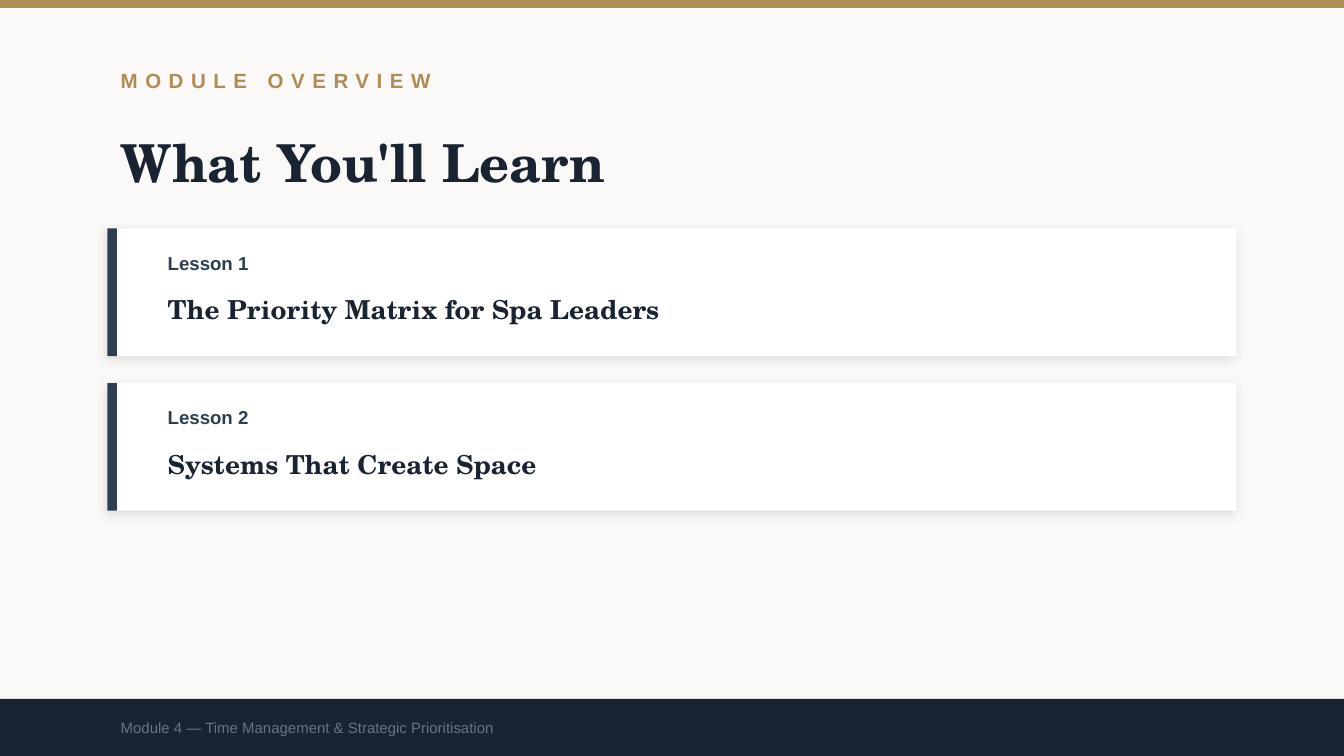
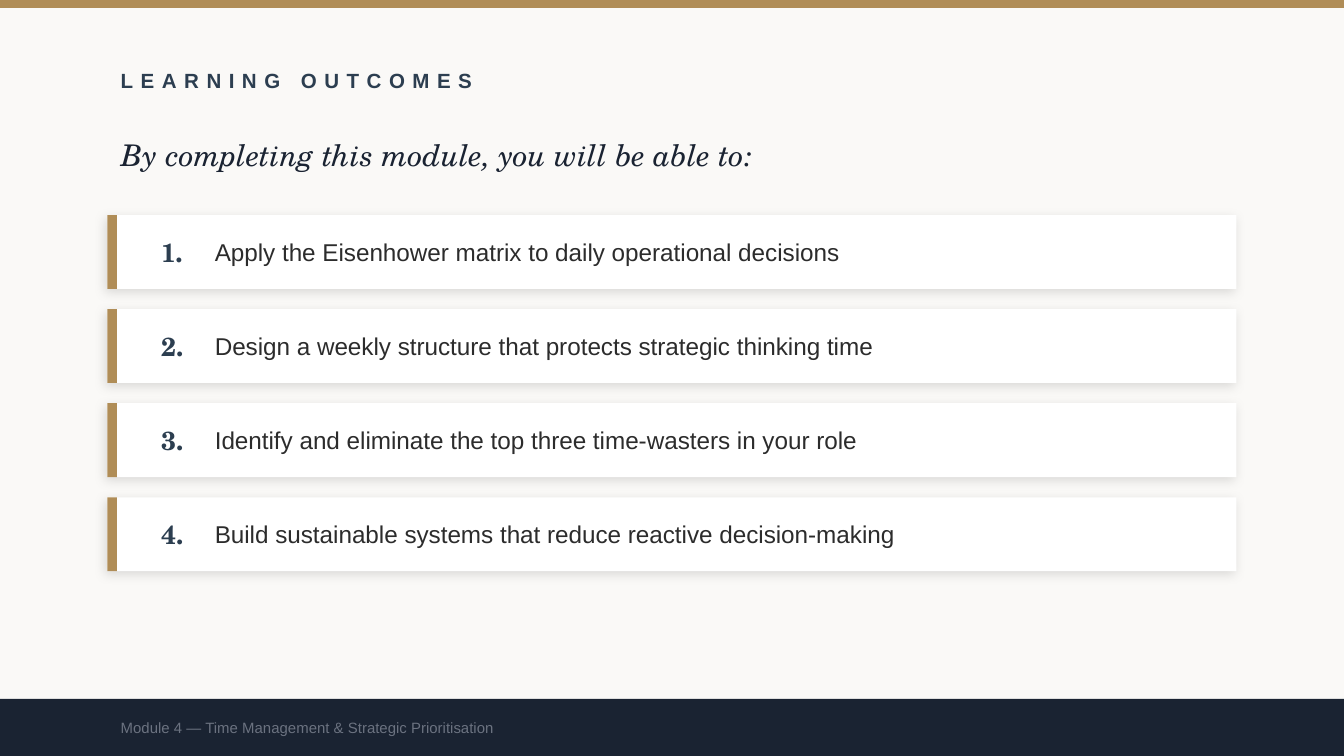
import pptx
import pptx.dml.color
import pptx.enum.shapes
import pptx.enum.text
import pptx.oxml
import pptx.oxml.ns
import pptx.util

Inches = pptx.util.Inches
RGBColor = pptx.dml.color.RGBColor

# Palette and fonts
CREAM = RGBColor(0xFA, 0xF9, 0xF7)
GOLD = RGBColor(0xB0, 0x8D, 0x57)
NAVY = RGBColor(0x1A, 0x23, 0x32)
SLATE = RGBColor(0x2C, 0x3E, 0x50)
WHITE = RGBColor(0xFF, 0xFF, 0xFF)
CHARCOAL = RGBColor(0x2C, 0x2C, 0x2C)
GREY = RGBColor(0x6B, 0x72, 0x80)
SANS = "Arial"
SERIF = "TeX Gyre Schola"

# Shared geometry, in inches, on a 16:9 page
WIDTH = 10
HEIGHT = WIDTH * 9 / 16
MARGIN = 0.8
TEXT_WIDTH = 8
CARD_WIDTH = 8.4
ACCENT_WIDTH = 0.07
FOOTER_TOP = 5.2
FOOTER_HEIGHT = HEIGHT - FOOTER_TOP

FOOTER = "Module 4 — Time Management & Strategic Prioritisation"
LESSONS = ["The Priority Matrix for Spa Leaders", "Systems That Create Space"]
OUTCOMES = [
    "Apply the Eisenhower matrix to daily operational decisions",
    "Design a weekly structure that protects strategic thinking time",
    "Identify and eliminate the top three time-wasters in your role",
    "Build sustainable systems that reduce reactive decision-making",
]
SHADOW = (
    f'<a:outerShdw {pptx.oxml.ns.nsdecls("a")} blurRad="76200" dist="25400" '
    'dir="8100000" algn="bl" rotWithShape="0">'
    '<a:srgbClr val="000000"><a:alpha val="12000"/></a:srgbClr></a:outerShdw>'
)


def write(box, text, size, font, color, bold=False, italic=False, spacing=0):
    """Put one formatted line, vertically centred, into a box."""
    frame = box.text_frame
    frame.text = text
    frame.word_wrap = True
    frame.auto_size = pptx.enum.text.MSO_AUTO_SIZE.NONE
    frame.vertical_anchor = pptx.enum.text.MSO_ANCHOR.MIDDLE
    para = frame.paragraphs[0]
    para.alignment = pptx.enum.text.PP_ALIGN.LEFT
    span = para.runs[0]
    span.font.size = pptx.util.Pt(size)
    span.font.name = font
    span.font.color.rgb = color
    span.font.bold = bold
    span.font.italic = italic
    if spacing:
        span.font._element.set("spc", str(spacing * 100))


def add_text(page, left, top, width, height, text, size, font, color, **style):
    box = page.shapes.add_textbox(
        Inches(left), Inches(top), Inches(width), Inches(height))
    write(box, text, size, font, color, **style)


def add_bar(page, left, top, width, height, color):
    bar = page.shapes.add_shape(
        pptx.enum.shapes.MSO_SHAPE.RECTANGLE,
        Inches(left), Inches(top), Inches(width), Inches(height))
    bar.shadow.inherit = False
    bar.fill.solid()
    bar.fill.fore_color.rgb = color
    bar.line.fill.background()
    return bar


def add_card(page, top, height, accent):
    """White card with a soft shadow and a coloured left edge."""
    card = add_bar(page, MARGIN, top, CARD_WIDTH, height, WHITE)
    effects = card._element.spPr.find(pptx.oxml.ns.qn("a:effectLst"))
    effects.append(pptx.oxml.parse_xml(SHADOW))
    add_bar(page, MARGIN, top, ACCENT_WIDTH, height, accent)


def add_page(deck, label, label_color, title, title_height, title_size, **style):
    """Page with background, top band, label, title and footer."""
    page = deck.slides.add_slide(deck.slide_layouts.get_by_name("Title Only"))
    page.background.fill.solid()
    page.background.fill.fore_color.rgb = CREAM
    add_bar(page, 0, 0, WIDTH, 0.06, GOLD)
    add_text(page, MARGIN, 0.4, TEXT_WIDTH, 0.4, label, 11, SANS, label_color,
             bold=True, spacing=4)
    heading = page.shapes.title
    heading.left, heading.top = Inches(MARGIN), Inches(0.9)
    heading.width, heading.height = Inches(TEXT_WIDTH), Inches(title_height)
    write(heading, title, title_size, SERIF, NAVY, **style)
    add_bar(page, 0, FOOTER_TOP, WIDTH, FOOTER_HEIGHT, NAVY)
    add_text(page, MARGIN, FOOTER_TOP, TEXT_WIDTH, FOOTER_HEIGHT, FOOTER,
             8, SANS, GREY)
    return page


def add_lessons(page):
    for index, lesson in enumerate(LESSONS):
        top = 1.7 + index * 1.15
        add_card(page, top, 0.95, SLATE)
        add_text(page, 1.15, top + 0.08, 7, 0.35, f"Lesson {index + 1}",
                 10, SANS, SLATE, bold=True)
        add_text(page, 1.15, top + 0.4, 7.8, 0.4, lesson,
                 14, SERIF, NAVY, bold=True)


def add_outcomes(page):
    height = 0.55
    for index, outcome in enumerate(OUTCOMES):
        top = 1.6 + index * 0.7
        add_card(page, top, height, GOLD)
        add_text(page, 1.1, top, 0.4, height, f"{index + 1}.",
                 14, SERIF, SLATE, bold=True)
        add_text(page, 1.5, top, 7.4, height, outcome, 13, SANS, CHARCOAL)


def main():
    deck = pptx.Presentation()
    deck.slide_width, deck.slide_height = Inches(WIDTH), Inches(HEIGHT)

    # Module overview
    add_lessons(add_page(deck, "MODULE OVERVIEW", GOLD,
                         "What You'll Learn", 0.6, 28, bold=True))

    # Learning outcomes
    add_outcomes(add_page(deck, "LEARNING OUTCOMES", SLATE,
                          "By completing this module, you will be able to:",
                          0.5, 16, italic=True))

    deck.save("out.pptx")


if __name__ == "__main__":
    main()
